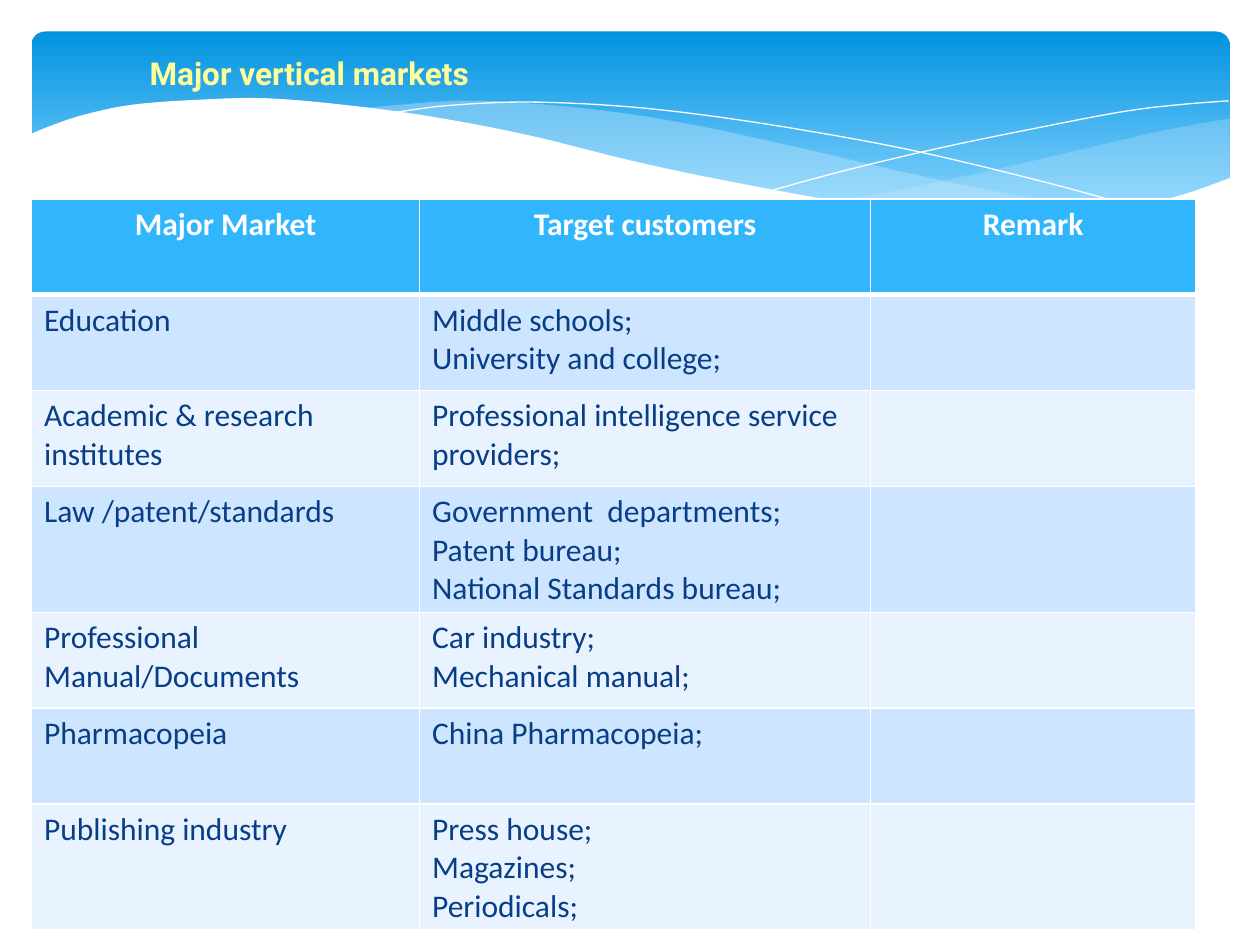
import pptx
import pptx.util
from lxml import etree
from pptx.dml.color import RGBColor
from pptx.enum.shapes import MSO_SHAPE
from pptx.enum.text import MSO_AUTO_SIZE, PP_ALIGN
from pptx.oxml.ns import qn
from pptx.util import Inches

WHITE = RGBColor(0xFF, 0xFF, 0xFF)
YELLOW = RGBColor(0xFF, 0xFF, 0x99)
NAVY = RGBColor(0x07, 0x3E, 0x87)
SKY = RGBColor(0x31, 0xB6, 0xFD)
DEEP_SKY = RGBColor(0x02, 0x93, 0xE0)
PALE_SKY = RGBColor(0x83, 0xD3, 0xFE)
MIST = RGBColor(0xC6, 0xE7, 0xFC)
BAND_DARK = RGBColor(0xCD, 0xE5, 0xFE)
BAND_LIGHT = RGBColor(0xE8, 0xF3, 0xFF)

# Each wave is a list of curves; each curve is a list of anchor points in inches.
RIGHT_RIPPLE = [
    [(9.76, 0.94), (9.21, 1.04), (8.61, 1.18), (7.79, 1.37), (7.06, 1.52), (6.61, 1.6)],
    [(6.61, 1.6), (7.05, 1.66), (7.57, 1.7), (8.14, 1.72), (8.72, 1.69), (9.21, 1.6),
     (9.76, 1.41)],
]
CENTRE_RIPPLE = [
    [(8.93, 1.67), (8.37, 1.6), (7.75, 1.49), (7.06, 1.34), (6.29, 1.16), (5.55, 1),
     (4.89, 0.89), (4.2, 0.82), (3.61, 0.8), (2.86, 0.86)],
    [(2.86, 0.86), (3.42, 0.94), (4.04, 1.06), (4.91, 1.26), (5.66, 1.43), (6.34, 1.56),
     (6.95, 1.65), (7.61, 1.71), (8.18, 1.73), (8.93, 1.67)],
]
FALLING_LINE = [
    [(3.09, 0.9), (3.53, 0.84), (4.16, 0.81), (4.89, 0.84), (5.56, 0.91), (6.36, 1.03),
     (7.27, 1.2), (8.31, 1.45), (9.07, 1.66)],
]
RISING_LINE = [
    [(6.13, 1.51), (6.72, 1.35), (7.48, 1.17), (8.36, 0.99), (8.95, 0.88), (9.37, 0.83),
     (9.75, 0.8)],
]
WHITE_WAVE = [
    [(9.77, 1.41), (9.3, 1.57), (8.75, 1.67), (8.09, 1.71), (7.44, 1.68), (6.68, 1.6),
     (5.79, 1.44), (5.03, 1.28), (4.18, 1.07), (3.39, 0.92), (2.71, 0.83), (2.11, 0.78),
     (1.61, 0.79), (1.06, 0.83), (0.67, 0.91), (0.4, 1), (0.23, 1.07)],
    [(0.23, 2.24), (9.77, 2.24)],
]

COLUMNS = [3.08, 3.58, 2.58]
ROW_HEIGHT, TALL_ROW = 0.76, 1
ROWS = [
    ("Major Market", "Target customers", "Remark"),
    ("Education", "Middle schools;\nUniversity and college;", ""),
    ("Academic & research institutes", "Professional intelligence service providers;", ""),
    ("Law /patent/standards",
     "Government  departments;\nPatent bureau;\nNational Standards bureau;", ""),
    ("Professional Manual/Documents", "Car industry;\nMechanical manual;", ""),
    ("Pharmacopeia", "China Pharmacopeia;", ""),
    ("Publishing industry", "Press house;\nMagazines;\nPeriodicals;", ""),
]


def spline(anchors, steps=6):
    """Return points of a Catmull-Rom curve through the anchors."""
    padded = [anchors[0], *anchors, anchors[-1]]
    points = [anchors[0]]
    for a, b, c, d in zip(padded, padded[1:], padded[2:], padded[3:]):
        for i in range(1, steps + 1):
            t = i / steps
            points.append(tuple(
                (2 * q + (r - p) * t + (2 * p - 5 * q + 4 * r - u) * t ** 2
                 + (3 * q - p - 3 * r + u) * t ** 3) / 2
                for p, q, r, u in zip(a, b, c, d)))
    return points


class SlideBuilder:
    body_font = "Calibri"
    title_font = "Roboto"
    size = pptx.util.Pt(18)

    def __init__(self, slide):
        self.s = slide

    def set_font(self, p, name, color, bold):
        p.font.name, p.font.size, p.font.bold = name, self.size, bold
        p.font.color.rgb = color

    def banner(self, left, top, width, height):
        sp = self.s.shapes.add_shape(MSO_SHAPE.ROUNDED_RECTANGLE, Inches(left),
                                     Inches(top), Inches(width), Inches(height))
        sp.adjustments[0] = 0.07
        sp.shadow.inherit = False
        sp.line.fill.background()
        sp.fill.gradient()
        sp.fill.gradient_angle = 270
        stops = sp.fill.gradient_stops
        for stop, color, position in zip(stops, (DEEP_SKY, PALE_SKY), (0, 0.9)):
            stop.color.rgb, stop.position = color, position

    def wave(self, curves, fill=None, alpha=100):
        """Draw a filled wave, or an open white hairline when there is no fill."""
        points = [(Inches(x), Inches(y)) for curve in curves for x, y in spline(curve)]
        builder = self.s.shapes.build_freeform(*points[0])
        builder.add_line_segments(points[1:], close=fill is not None)
        sp = builder.convert_to_shape()
        sp.shadow.inherit = False
        if fill is None:
            sp.fill.background()
            sp.line.color.rgb = WHITE
            sp.line.width = pptx.util.Pt(0)
            return
        sp.line.fill.background()
        sp.fill.solid()
        sp.fill.fore_color.rgb = fill
        if alpha < 100:
            color = sp.fill._xPr.find(qn("a:solidFill"))[0]
            etree.SubElement(color, qn("a:alpha"), val=str(alpha * 1000))

    def title(self, text, left, top, width, height):
        sp = self.s.shapes.add_textbox(Inches(left), Inches(top),
                                       Inches(width), Inches(height))
        tf = sp.text_frame
        tf.word_wrap = True
        tf.auto_size = MSO_AUTO_SIZE.SHAPE_TO_FIT_TEXT
        p = tf.paragraphs[0]
        p.text, p.alignment = text, PP_ALIGN.CENTER
        self.set_font(p, self.title_font, YELLOW, True)

    def borders(self, cell, top, bottom):
        tc_pr = cell._tc.get_or_add_tcPr()
        for side, points in zip("LRTB", (1, 1, top, bottom)):
            ln = etree.SubElement(tc_pr, qn(f"a:ln{side}"), w=str(pptx.util.Pt(points)))
            fill = etree.SubElement(ln, qn("a:solidFill"))
            etree.SubElement(fill, qn("a:srgbClr"), val=str(WHITE))

    def table(self, rows, columns, left, top):
        heights = [TALL_ROW if row[1].count("\n") == 2 else ROW_HEIGHT for row in rows]
        table = self.s.shapes.add_table(
            len(rows), len(columns), Inches(left), Inches(top),
            Inches(sum(columns)), Inches(sum(heights))).table
        for column, width in zip(table.columns, columns):
            column.width = Inches(width)
        for i, (row, height) in enumerate(zip(rows, heights)):
            table.rows[i].height = Inches(height)
            header = i == 0
            band = SKY if header else BAND_DARK if i % 2 else BAND_LIGHT
            for j, text in enumerate(row):
                cell = table.cell(i, j)
                cell.text = text
                self.borders(cell, 3 if i == 1 else 1, 3 if header else 1)
                cell.fill.solid()
                cell.fill.fore_color.rgb = band
                for p in cell.text_frame.paragraphs:
                    p.alignment = PP_ALIGN.CENTER if header else PP_ALIGN.LEFT
                    self.set_font(p, self.body_font, WHITE if header else NAVY, header)


def main():
    prs = pptx.Presentation()
    prs.slide_width, prs.slide_height = Inches(10), Inches(7.5)
    builder = SlideBuilder(prs.slides.add_slide(prs.slide_layouts[6]))
    builder.banner(0.25, 0.25, 9.51, 1.56)
    builder.wave(RIGHT_RIPPLE, MIST, 29)
    builder.wave(CENTRE_RIPPLE, MIST, 40)
    builder.wave(FALLING_LINE)
    builder.wave(RISING_LINE)
    builder.wave(WHITE_WAVE, WHITE)
    builder.title("Major vertical markets", 0.58, 0.38, 3.75, 0.4)
    builder.table(ROWS, COLUMNS, 0.25, 1.58)
    prs.save("out.pptx")


if __name__ == "__main__":
    main()
